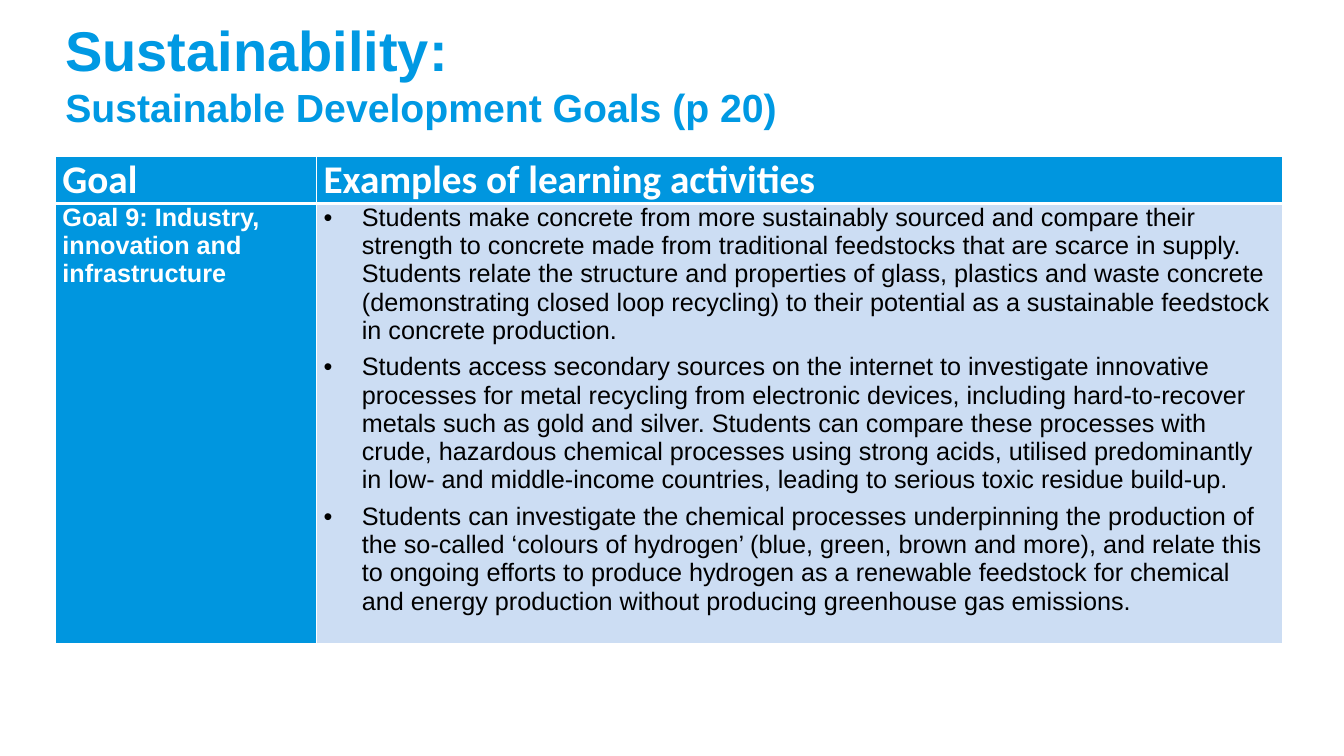
from lxml import etree
from pptx import Presentation
from pptx.dml.color import RGBColor
from pptx.enum.text import MSO_ANCHOR
from pptx.oxml.ns import qn
from pptx.util import Inches, Pt

MIDDLE = MSO_ANCHOR.MIDDLE
TOP = MSO_ANCHOR.TOP
COLORS = {
    "title": "0099E3",
    "header": "0096DF",
    "body": "CCDDF3",
    "white": "FFFFFF",
    "black": "000000",
}
COLUMN_WIDTHS = (2.59, 9.58)
ROW_HEIGHTS = (0.47, 4.07)
ACTIVITIES = (
    "Students make concrete from more sustainably sourced and compare their strength to concrete "
    "made from traditional feedstocks that are scarce in supply. Students relate the structure and "
    "properties of glass, plastics and waste concrete (demonstrating closed loop recycling) to their "
    "potential as a sustainable feedstock in concrete production.",
    "Students access secondary sources on the internet to investigate innovative processes for metal "
    "recycling from electronic devices, including hard-to-recover metals such as gold and silver. "
    "Students can compare these processes with crude, hazardous chemical processes using strong acids, "
    "utilised predominantly in low- and middle-income countries, leading to serious toxic residue build-up.",
    "Students can investigate the chemical processes underpinning the production of the so-called "
    "‘colours of hydrogen’ (blue, green, brown and more), and relate this to ongoing efforts to produce "
    "hydrogen as a renewable feedstock for chemical and energy production without producing greenhouse "
    "gas emissions.",
)


def rgb(name):
    return RGBColor.from_string(COLORS[name])


def add_text(paragraph, text, size=18, font="Arial", color="white", bold=True):
    run = paragraph.add_run()
    run.text = text
    run.font.size = Pt(size)
    run.font.name = font
    run.font.bold = bold
    run.font.color.rgb = rgb(color)


def add_bullet(paragraph):
    properties = paragraph._p.get_or_add_pPr()
    properties.set("marL", str(Inches(0.38)))
    properties.set("indent", str(Inches(-0.38)))
    etree.SubElement(properties, qn("a:buFont"), typeface="Arial")
    etree.SubElement(properties, qn("a:buChar"), char="•")


def set_borders(cell, bottom):
    properties = cell._tc.get_or_add_tcPr()
    for side, width in (("L", 1), ("R", 1), ("T", 1), ("B", bottom)):
        line = etree.SubElement(properties, qn(f"a:ln{side}"), w=str(Pt(width)))
        fill = etree.SubElement(line, qn("a:solidFill"))
        etree.SubElement(fill, qn("a:srgbClr"), val=COLORS["white"])


def fill_cell(cell, texts, fill, bottom=1, bullets=False, **text_format):
    cell.margin_left = cell.margin_right = Inches(0.07)
    cell.margin_top = cell.margin_bottom = 0
    cell.vertical_anchor = TOP
    set_borders(cell, bottom)
    cell.fill.solid()
    cell.fill.fore_color.rgb = rgb(fill)
    frame = cell.text_frame
    for index, text in enumerate(texts):
        paragraph = frame.add_paragraph() if index else frame.paragraphs[0]
        paragraph.space_after = Pt(6)
        if bullets:
            add_bullet(paragraph)
        add_text(paragraph, text, **text_format)


def add_title(slide):
    box = slide.shapes.add_textbox(Inches(0.55), Inches(0.1), Inches(12.47), Inches(1.25))
    frame = box.text_frame
    frame.word_wrap = True
    frame.vertical_anchor = MIDDLE
    paragraph = frame.paragraphs[0]
    add_text(paragraph, "Sustainability:", size=40, color="title")
    paragraph.add_line_break()
    add_text(paragraph, "Sustainable Development Goals (p 20)", size=28, color="title")


def add_goals_table(slide):
    table = slide.shapes.add_table(
        len(ROW_HEIGHTS), len(COLUMN_WIDTHS), Inches(0.55), Inches(1.55),
        Inches(sum(COLUMN_WIDTHS)), Inches(sum(ROW_HEIGHTS)),
    ).table
    for column, width in zip(table.columns, COLUMN_WIDTHS):
        column.width = Inches(width)
    for row, height in zip(table.rows, ROW_HEIGHTS):
        row.height = Inches(height)
    for index, heading in enumerate(("Goal", "Examples of learning activities")):
        fill_cell(table.cell(0, index), [heading], "header", bottom=3, size=28, font="Calibri")
    fill_cell(table.cell(1, 0), ["Goal 9: Industry, innovation and infrastructure"], "header")
    fill_cell(table.cell(1, 1), ACTIVITIES, "body", bullets=True, color="black", bold=False)


def main():
    presentation = Presentation()
    presentation.slide_width = Inches(13.33)
    presentation.slide_height = Inches(7.5)
    slide = presentation.slides.add_slide(presentation.slide_layouts[6])
    add_title(slide)
    add_goals_table(slide)
    presentation.save("out.pptx")


if __name__ == "__main__":
    main()
